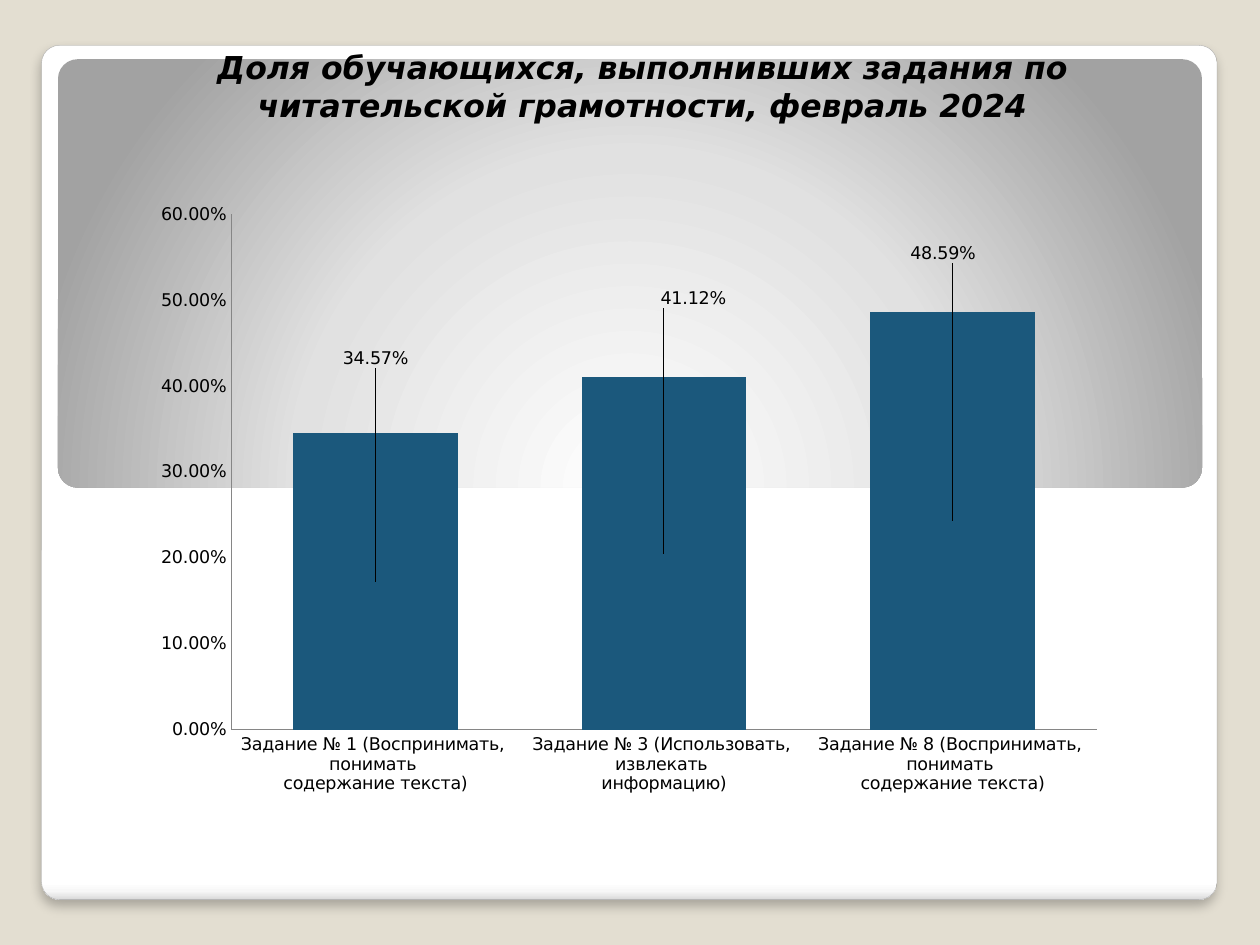
"""Build a slide with a column chart of reading literacy results."""
from dataclasses import dataclass

from pptx import Presentation
from pptx.chart import data
from pptx.dml.color import RGBColor
from pptx.enum import chart as ch, shapes, text
from pptx.oxml import ns, parse_xml
from pptx.util import Inches, Pt


@dataclass(frozen=True)
class Theme:
    back: str = "E3DED1"
    edge: str = "A4A4A4"
    axis: str = "868686"
    bar: str = "1B587C"
    ink: str = "000000"
    font: str = "DejaVu Sans"
    head: int = 18
    body: int = 10


@dataclass(frozen=True)
class Panel:
    box: tuple
    bend: float
    stops: tuple
    shade: str


@dataclass(frozen=True)
class Task:
    name: str
    share: float
    dx: float
    dy: float


THEME = Theme()
LINEAR = '<a:lin ang="5400000" scaled="0"/>'
RADIAL = ('<a:path path="circle"><a:fillToRect l="50000" t="175000" '
          'r="50000" b="-75000"/></a:path>')
CARD = Panel((0.33, 0.36, 9.33, 6.78), 0.021,
             ((0, "FFFFFF"), (98, "FFFFFF"), (99, "F7F7F7"), (100, "DADADA")), LINEAR)
GLOW = Panel((0.46, 0.47, 9.08, 3.4), 0.046,
             ((0, "FFFFFF"), (55, "E1E1E1"), (100, "A2A2A2")), RADIAL)
TASKS = (
    Task("Задание № 1 (Воспринимать, \nпонимать \nсодержание текста)", 0.3457, 0, -0.35),
    Task("Задание № 3 (Использовать, \nизвлекать \nинформацию)", 0.4112, 0.03, -0.4),
    Task("Задание № 8 (Воспринимать, \nпонимать \nсодержание текста)", 0.4859, -0.01, -0.42),
)
TITLE = "Доля обучающихся, выполнивших задания по читательской грамотности, февраль 2024"


def rgb(code: str) -> RGBColor:
    """Turn a hex code into a colour."""
    return RGBColor.from_string(code)


def style(font, size: int) -> None:
    """Apply the theme font at a given size."""
    font.name, font.size = THEME.font, Pt(size)
    font.color.rgb = rgb(THEME.ink)


def draw_panel(slide, panel: Panel):
    """Draw a rounded panel with a gradient and no outline."""
    shape = slide.shapes.add_shape(
        shapes.MSO_SHAPE.ROUNDED_RECTANGLE, *map(Inches, panel.box))
    shape.adjustments[0] = panel.bend
    shape.shadow.inherit = False
    shape.line.fill.background()
    shape.fill.gradient()
    stops = "".join(f'<a:gs pos="{pos * 1000}"><a:srgbClr val="{code}"/></a:gs>'
                    for pos, code in panel.stops)
    props = shape._element.spPr
    props.replace(props.find(ns.qn("a:gradFill")), parse_xml(
        f'<a:gradFill {ns.nsdecls("a")} rotWithShape="1">'
        f'<a:gsLst>{stops}</a:gsLst>{panel.shade}</a:gradFill>'))
    return shape


def draw_card(slide) -> None:
    """Draw the white card with its thin edge and soft shadow."""
    card = draw_panel(slide, CARD)
    card.line.color.rgb = rgb(THEME.edge)
    card.line.width = Pt(0.16)
    card._element.spPr.find(ns.qn("a:effectLst")).append(parse_xml(
        f'<a:outerShdw {ns.nsdecls("a")} blurRad="{Pt(6)}" dist="{Pt(4)}" '
        f'dir="5400000" algn="t" rotWithShape="0"><a:srgbClr val="{THEME.ink}">'
        '<a:alpha val="25000"/></a:srgbClr></a:outerShdw>'))


def draw_title(slide) -> None:
    """Place the title above the panels."""
    title = slide.shapes.title
    title.left, title.top, title.width, title.height = map(Inches, (0.79, 0.33, 8.62, 0.7))
    frame = title.text_frame
    frame.text = TITLE
    frame.word_wrap = True
    frame.auto_size = text.MSO_AUTO_SIZE.NONE
    frame.vertical_anchor = text.MSO_ANCHOR.BOTTOM
    frame.margin_left = frame.margin_right = Inches(0.05)
    frame.margin_top = frame.margin_bottom = Inches(0.05)
    para = frame.paragraphs[0]
    para.alignment = text.PP_ALIGN.CENTER
    style(para.font, THEME.head)
    para.font.bold = para.font.italic = True
    slide.shapes._spTree.append(title._element)


def layout(inner: bool = False, **sizes: float):
    """Make a manual chart layout from fractions of the chart."""
    modes = ('<c:layoutTarget val="inner"/><c:xMode val="edge"/><c:yMode val="edge"/>'
             if inner else "")
    parts = "".join(f'<c:{key} val="{val}"/>' for key, val in sizes.items())
    return parse_xml(f'<c:layout {ns.nsdecls("c")}><c:manualLayout>{modes}{parts}'
                     '</c:manualLayout></c:layout>')


def draw_chart(slide) -> None:
    """Draw the share of pupils who solved each task."""
    table = data.CategoryChartData(number_format="0.00%")
    table.categories = [task.name for task in TASKS]
    table.add_series("Series 1", [task.share for task in TASKS])
    chart = slide.shapes.add_chart(
        ch.XL_CHART_TYPE.COLUMN_STACKED,
        *map(Inches, (1.14, 1.55, 7.72, 5.05)), table).chart
    chart.has_legend = chart.has_title = False
    style(chart.font, THEME.body)
    for axis in (chart.category_axis, chart.value_axis):
        axis.has_major_gridlines = False
        axis.major_tick_mark = axis.minor_tick_mark = ch.XL_TICK_MARK.NONE
        axis.format.line.color.rgb = rgb(THEME.axis)
    scale = chart.value_axis
    scale.minimum_scale, scale.maximum_scale, scale.major_unit = 0, 0.6, 0.1
    scale.tick_labels.number_format = "0.00%"
    scale.tick_labels.number_format_is_linked = False

    plot = chart.plots[0]
    plot.gap_width, plot.overlap, plot.vary_by_categories = 75, 100, False
    area = chart._chartSpace.chart.plotArea
    for old in area.findall(ns.qn("c:layout")):
        area.remove(old)
    area.insert(0, layout(True, x=0.09, y=0.03, w=0.89, h=0.81))

    bars = plot.series[0]
    bars.format.fill.solid()
    bars.format.fill.fore_color.rgb = rgb(THEME.bar)
    labels = bars.data_labels
    labels.show_value = True
    labels.number_format = "0.00%"
    labels.number_format_is_linked = False
    for spot, task in enumerate(TASKS):
        bars.points[spot].data_label.position = ch.XL_LABEL_POSITION.CENTER
    for label, task in zip(bars._element.iter(ns.qn("c:dLbl")), TASKS):
        label.insert(1, layout(x=task.dx, y=task.dy))


def main() -> None:
    """Build and save the slide."""
    deck = Presentation()
    deck.slide_width, deck.slide_height = Inches(10), Inches(7.5)
    slide = deck.slides.add_slide(deck.slide_layouts[5])
    slide.background.fill.solid()
    slide.background.fill.fore_color.rgb = rgb(THEME.back)
    draw_card(slide)
    draw_panel(slide, GLOW)
    draw_title(slide)
    draw_chart(slide)
    deck.save("out.pptx")


if __name__ == "__main__":
    main()
